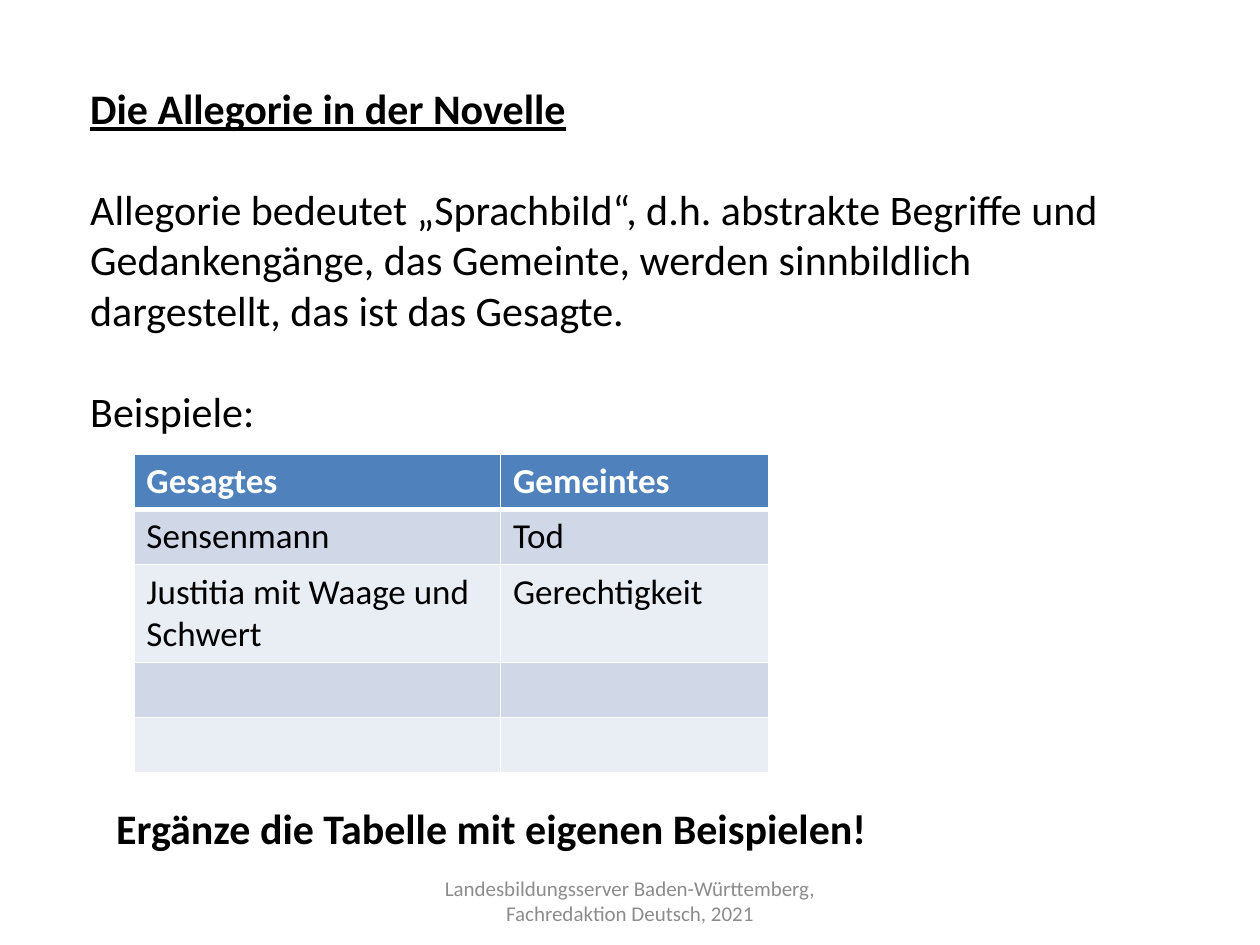
import pptx
import pptx.util
import pptx.dml.color
import pptx.enum.text
import pptx.oxml.ns
import lxml.etree

Pt = pptx.util.Pt
FONT = "Calibri"
BLACK, WHITE, GREY = "000000", "FFFFFF", "8C8C8C"
HEADER_BLUE, BANDS = "4F81BD", ("D0D8E8", "E9EDF4")


def color(hex_value):
    return pptx.dml.color.RGBColor.from_string(hex_value)


def add_run(paragraph, wording, size, hex_value=BLACK, bold=False, underline=False):
    run = paragraph.add_run()
    run.text = wording
    run.font.name = FONT
    run.font.size = Pt(size)
    run.font.bold = bold
    run.font.underline = underline
    run.font.color.rgb = color(hex_value)


def add_frame(slide, box, wrap=True):
    frame = slide.shapes.add_textbox(*map(Pt, box)).text_frame
    frame.word_wrap = wrap
    return frame


def add_explanation(slide, box):
    frame = add_frame(slide, box)
    heading = frame.paragraphs[0]
    add_run(heading, "Die Allegorie in der Novelle", 24, bold=True, underline=True)
    for wording in (
        "Allegorie bedeutet „Sprachbild“, d.h. abstrakte Begriffe und Gedankengänge, "
        "das Gemeinte, werden sinnbildlich dargestellt, das ist das Gesagte.",
        "Beispiele:",
    ):
        paragraph = frame.add_paragraph()
        paragraph.space_before = Pt(29)  # one line of distance
        add_run(paragraph, wording, 24)


def set_borders(cell, bottom_width):
    properties = cell._tc.get_or_add_tcPr()
    widths = {"a:lnL": 1, "a:lnR": 1, "a:lnT": 1, "a:lnB": bottom_width}
    for position, (side, width) in enumerate(widths.items()):
        line = lxml.etree.Element(pptx.oxml.ns.qn(side), w=str(Pt(width)))
        fill = lxml.etree.SubElement(line, pptx.oxml.ns.qn("a:solidFill"))
        lxml.etree.SubElement(fill, pptx.oxml.ns.qn("a:srgbClr"), val=WHITE)
        properties.insert(position, line)  # borders come before the fill


def add_examples(slide, box):
    examples = (
        ("Gesagtes", "Gemeintes"),
        ("Sensenmann", "Tod"),
        ("Justitia mit Waage und Schwert", "Gerechtigkeit"),
        ("", ""),
        ("", ""),
    )
    table = slide.shapes.add_table(len(examples), 2, *map(Pt, box)).table
    for column, width in zip(table.columns, (209.5, 153.5)):
        column.width = Pt(width)
    for row_number, pair in enumerate(examples):
        is_header = row_number == 0
        table.rows[row_number].height = Pt(56 if row_number == 2 else 31.5)
        for column_number, wording in enumerate(pair):
            cell = table.cell(row_number, column_number)
            cell.fill.solid()
            cell.fill.fore_color.rgb = color(
                HEADER_BLUE if is_header else BANDS[(row_number - 1) % 2])
            set_borders(cell, 3 if is_header else 1)
            if wording:
                add_run(cell.text_frame.paragraphs[0], wording, 20,
                        WHITE if is_header else BLACK, bold=is_header)


def add_task(slide, box):
    frame = add_frame(slide, box, wrap=False)
    add_run(frame.paragraphs[0], "Ergänze die Tabelle mit eigenen Beispielen!", 24, bold=True)


def add_footer(slide, box):
    frame = add_frame(slide, box)
    frame.vertical_anchor = pptx.enum.text.MSO_ANCHOR.MIDDLE
    credit = frame.paragraphs[0]
    credit.alignment = pptx.enum.text.PP_ALIGN.CENTER
    add_run(credit, "Landesbildungsserver Baden-Württemberg, Fachredaktion Deutsch, 2021",
            12, GREY)


def main():
    presentation = pptx.Presentation()
    presentation.slide_width, presentation.slide_height = Pt(720), Pt(540)
    slide = presentation.slides.add_slide(presentation.slide_layouts[6])
    # Footer
    add_footer(slide, (246, 500.5, 228, 28.75))
    # Table of examples
    add_examples(slide, (76.5, 259.5, 363, 182))
    # Task below the table
    add_task(slide, (59.3, 455, 448, 36))
    # Heading and explanation
    add_explanation(slide, (44.5, 43.5, 618, 211))
    presentation.save("out.pptx")


if __name__ == "__main__":
    main()
